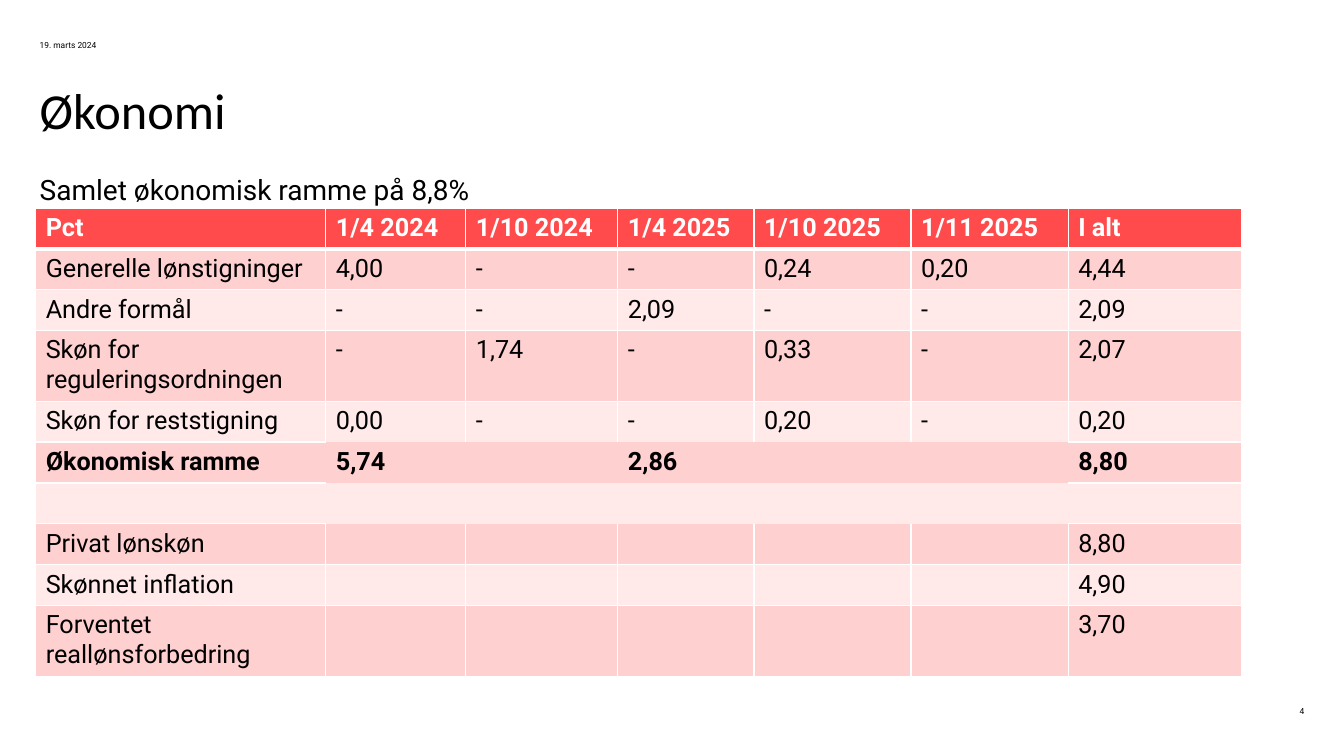
from dataclasses import dataclass

from lxml import etree
from pptx import Presentation
from pptx.dml.color import RGBColor
from pptx.enum.text import MSO_ANCHOR, PP_ALIGN
from pptx.oxml.ns import qn
from pptx.util import Cm, Pt

TOP, MIDDLE = MSO_ANCHOR.TOP, MSO_ANCHOR.MIDDLE
LEFT, RIGHT = PP_ALIGN.LEFT, PP_ALIGN.RIGHT


@dataclass(frozen=True)
class Theme:
    title_font: str = "Calibri"
    body_font: str = "Roboto"
    text: RGBColor = RGBColor(0x00, 0x00, 0x00)
    white: RGBColor = RGBColor(0xFF, 0xFF, 0xFF)
    header: RGBColor = RGBColor(0xFF, 0x4B, 0x4B)
    bands: tuple = (RGBColor(0xFF, 0xE9, 0xE9), RGBColor(0xFF, 0xD0, 0xD0))
    title_size: int = 36
    subtitle_size: int = 20
    table_size: int = 18
    small_size: int = 6


theme = Theme()


def add_span(para, text, size, font=theme.body_font, color=theme.text, bold=False):
    span = para.add_run()
    span.text = text
    span.font.size = Pt(size)
    span.font.name = font
    span.font.color.rgb = color
    span.font.bold = bold


def add_text(page, area, text, size, font=theme.body_font, anchor=TOP, align=LEFT):
    box = page.shapes.add_textbox(*(Cm(length) for length in area))
    frame = box.text_frame
    frame.word_wrap = True
    frame.vertical_anchor = anchor
    frame.margin_left = frame.margin_top = frame.margin_right = frame.margin_bottom = 0
    para = frame.paragraphs[0]
    para.alignment = align
    add_span(para, text, size, font)
    return para


deck = Presentation()
deck.slide_width = Cm(33.87)
deck.slide_height = Cm(19.05)
page = deck.slides.add_slide(deck.slide_layouts[6])

title = add_text(page, (1, 2.24, 31.87, 3.55), "Økonomi", theme.title_size, theme.title_font)
title.line_spacing = 0.83
add_text(page, (1, 1, 2.75, 0.3), "19. marts 2024", theme.small_size, anchor=MIDDLE)
add_text(page, (31.9, 17.76, 0.97, 0.3), "4", theme.small_size, anchor=MIDDLE, align=RIGHT)

table_rows = [
    ("Pct", "1/4 2024", "1/10 2024", "1/4 2025", "1/10 2025", "1/11 2025", "I alt"),
    ("Generelle lønstigninger", "4,00", "-", "-", "0,24", "0,20", "4,44"),
    ("Andre formål", "-", "-", "2,09", "-", "-", "2,09"),
    ("Skøn for reguleringsordningen", "-", "1,74", "-", "0,33", "-", "2,07"),
    ("Skøn for reststigning", "0,00", "-", "-", "0,20", "-", "0,20"),
    ("Økonomisk ramme", "5,74", "", "2,86", "", "", "8,80"),
    ("", "", "", "", "", "", ""),
    ("Privat lønskøn", "", "", "", "", "", "8,80"),
    ("Skønnet inflation", "", "", "", "", "", "4,90"),
    ("Forventet reallønsforbedring", "", "", "", "", "", "3,70"),
]
column_widths = (7.31, 3.53, 3.83, 3.43, 3.96, 3.96, 4.38)
row_height = 1.03
bold_rows = (0, 5)
borderless_cells = {(row, column) for row in (5, 6) for column in range(1, 6)}
neighbours = {"a:lnL": (0, -1), "a:lnR": (0, 1), "a:lnT": (-1, 0), "a:lnB": (1, 0)}

table = page.shapes.add_table(
    len(table_rows), len(column_widths), Cm(0.9), Cm(5.24),
    Cm(sum(column_widths)), Cm(row_height * len(table_rows)),
).table
for column, width in zip(table.columns, column_widths):
    column.width = Cm(width)
for row in table.rows:
    row.height = Cm(row_height)

for row_index, texts in enumerate(table_rows):
    is_header = row_index == 0
    for column_index, text in enumerate(texts):
        cell = table.cell(row_index, column_index)
        properties = cell._tc.get_or_add_tcPr()
        for tag, (row_step, column_step) in neighbours.items():
            neighbour = (row_index + row_step, column_index + column_step)
            under_header = {row_index, neighbour[0]} == {0, 1}
            line = etree.SubElement(properties, qn(tag), w=str(Pt(3 if under_header else 1)))
            if borderless_cells & {(row_index, column_index), neighbour}:
                etree.SubElement(line, qn("a:noFill"))
            else:
                fill = etree.SubElement(line, qn("a:solidFill"))
                etree.SubElement(fill, qn("a:srgbClr"), val=str(theme.white))
        cell.fill.solid()
        cell.fill.fore_color.rgb = theme.header if is_header else theme.bands[row_index % 2]
        if text:
            add_span(
                cell.text_frame.paragraphs[0], text, theme.table_size,
                color=theme.white if is_header else theme.text, bold=row_index in bold_rows,
            )

add_text(page, (1, 4.34, 13.51, 0.86), "Samlet økonomisk ramme på 8,8%", theme.subtitle_size)

deck.save("out.pptx")
